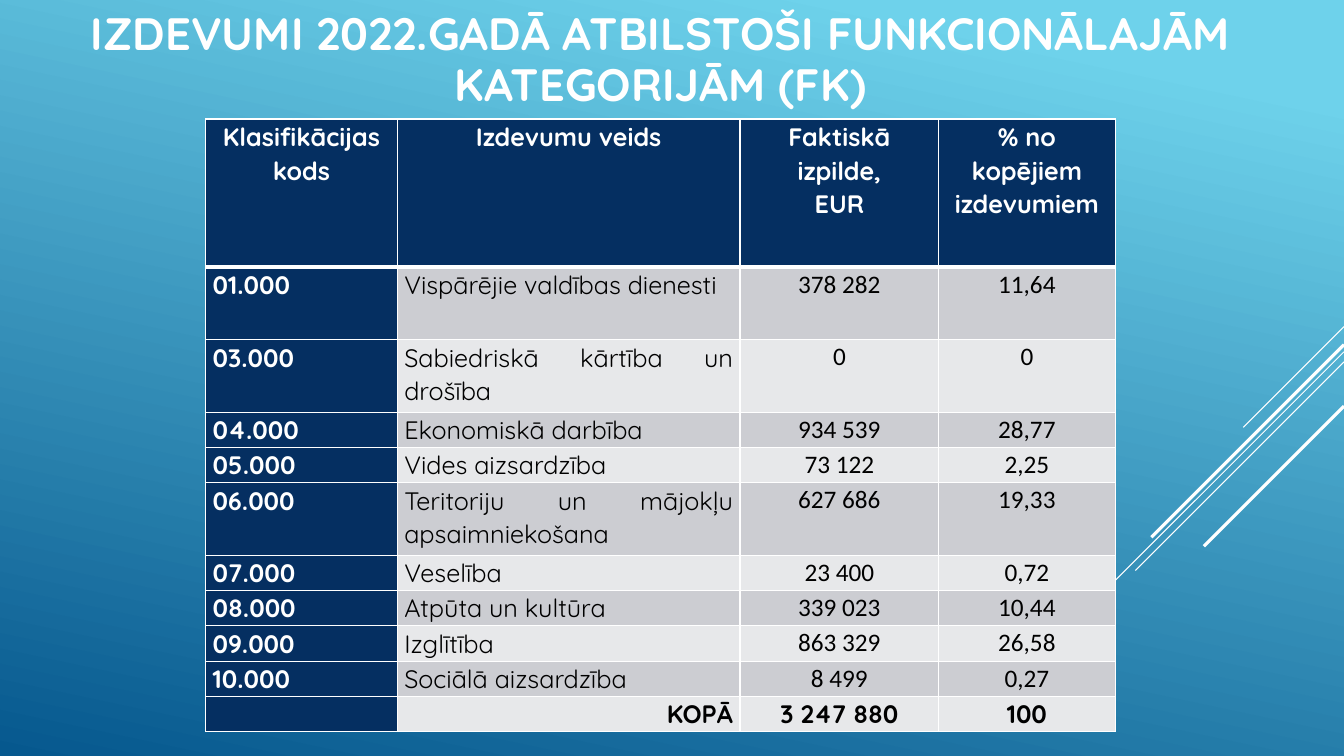
"""Build the slide on 2022 expenditure by functional category."""
from lxml.etree import SubElement
from pptx import Presentation
from pptx.dml.color import RGBColor
from pptx.enum.shapes import MSO_CONNECTOR
from pptx.enum.text import MSO_ANCHOR, PP_ALIGN
from pptx.oxml.ns import qn
from pptx.util import Inches, Pt

TITLE = "IZDEVUMI 2022.GADĀ ATBILSTOŠI FUNKCIONĀLAJĀM KATEGORIJĀM (FK)"
HEADER = ("Klasifikācijas kods", "Izdevumu veids", "Faktiskā izpilde,\nEUR", "% no kopējiem izdevumiem")
EXPENSES = [
    ("01.000", "Vispārējie valdības dienesti", "378 282", "11,64"),
    ("03.000", "Sabiedriskā kārtība un drošība", "0", "0"),
    ("04.000", "Ekonomiskā darbība", "934 539", "28,77"),
    ("05.000", "Vides aizsardzība", "73 122", "2,25"),
    ("06.000", "Teritoriju un mājokļu apsaimniekošana", "627 686", "19,33"),
    ("07.000", "Veselība", "23 400", "0,72"),
    ("08.000", "Atpūta un kultūra", "339 023", "10,44"),
    ("09.000", "Izglītība", "863 329", "26,58"),
    ("10.000", "Sociālā aizsardzība", "8 499", "0,27"),
]
TOTAL = ("", "KOPĀ", "3 247 880", "100")
ROWS = [HEADER, *EXPENSES, TOTAL]
COLUMN_WIDTHS = (1.9, 3.4, 1.97, 1.75)
HEADER_HEIGHT, TALL_HEIGHT, ROW_HEIGHT = 1.47, 0.72, 0.35
TALL_ROWS = (1, 2, 5)
SLIDE_WIDTH = 13.33
DIAGONALS = [(3.24, 1, 0.75), (3.49, 3.26, 0.75), (3.59, 2.07, 0.75), (3.42, 1.91, 2.25), (4.03, 1.39, 2.25)]

WHITE = RGBColor(0xFF, 0xFF, 0xFF)
BLACK = RGBColor(0, 0, 0)
NAVY = RGBColor(0x05, 0x2F, 0x61)
BAND_DARK = RGBColor(0xCC, 0xCD, 0xD2)
BAND_LIGHT = RGBColor(0xE7, 0xE8, 0xEA)
SKY = RGBColor(0x6E, 0xD2, 0xEB)
OCEAN = RGBColor(0x06, 0x58, 0x8E)


def add_run(paragraph, text, size, font_name, color, bold):
    run = paragraph.add_run()
    run.text = text
    run.font.size = Pt(size)
    run.font.name = font_name
    run.font.color.rgb = color
    run.font.bold = bold


def paint_background(slide):
    fill = slide.background.fill
    fill.gradient()
    fill.gradient_angle = 258
    for stop, position, color in zip(fill.gradient_stops, (0.1, 1), (SKY, OCEAN)):
        stop.position = position
        stop.color.rgb = color


def add_diagonals(slide):
    for top, reach, width in DIAGONALS:
        line = slide.shapes.add_connector(
            MSO_CONNECTOR.STRAIGHT, Inches(SLIDE_WIDTH), Inches(top),
            Inches(SLIDE_WIDTH - reach), Inches(top + reach))
        line.line.color.rgb = WHITE
        line.line.width = Pt(width)
        SubElement(line._element.spPr, qn("a:effectLst"))


def add_title(slide):
    frame = slide.shapes.add_textbox(Inches(0.58), 0, Inches(11.94), Inches(1.72)).text_frame
    frame.word_wrap = True
    frame.vertical_anchor = MSO_ANCHOR.MIDDLE
    frame.margin_bottom = Inches(0.57)
    paragraph = frame.paragraphs[0]
    paragraph.alignment = PP_ALIGN.CENTER
    paragraph.line_spacing = 0.95
    add_run(paragraph, TITLE, 32.4, "Quicksand", WHITE, True)


def add_borders(cell, top_width, bottom_width):
    properties = cell._tc.get_or_add_tcPr()
    for side, width in (("L", 1), ("R", 1), ("T", top_width), ("B", bottom_width)):
        border = SubElement(properties, qn(f"a:ln{side}"), w=str(Pt(width)))
        solid = SubElement(border, qn("a:solidFill"))
        SubElement(solid, qn("a:srgbClr"), val=str(WHITE))


def fill_cell(cell, text, row, column):
    is_header, is_total = row == 0, row == len(ROWS) - 1
    is_navy = is_header or column == 0
    add_borders(cell, 3 if row == 1 else 1, 3 if is_header else 1)
    cell.fill.solid()
    cell.fill.fore_color.rgb = NAVY if is_navy else BAND_DARK if row % 2 else BAND_LIGHT
    cell.margin_left = cell.margin_right = Inches(0.07)
    cell.margin_top = cell.margin_bottom = 0
    if is_header or column > 1:
        alignment = PP_ALIGN.CENTER
    else:
        alignment = PP_ALIGN.RIGHT if is_total else PP_ALIGN.JUSTIFY
    bold = is_navy or is_total
    font_name = "Quicksand" if bold or column == 1 else "Calibri"
    frame = cell.text_frame
    for index, line in enumerate(text.split("\n") if text else []):
        paragraph = frame.add_paragraph() if index else frame.paragraphs[0]
        paragraph.alignment = alignment
        paragraph.line_spacing = 1.07
        add_run(paragraph, line, 18, font_name, WHITE if is_navy else BLACK, bold)


def add_expense_table(slide):
    heights = [HEADER_HEIGHT] + [
        TALL_HEIGHT if row in TALL_ROWS else ROW_HEIGHT for row in range(1, len(ROWS))]
    table = slide.shapes.add_table(
        len(ROWS), len(COLUMN_WIDTHS), Inches(2.04), Inches(1.18),
        Inches(sum(COLUMN_WIDTHS)), Inches(sum(heights))).table
    for column, width in zip(table.columns, COLUMN_WIDTHS):
        column.width = Inches(width)
    for row, (values, height) in enumerate(zip(ROWS, heights)):
        table.rows[row].height = Inches(height)
        for column, text in enumerate(values):
            fill_cell(table.cell(row, column), text, row, column)


def main():
    presentation = Presentation()
    presentation.slide_width = Inches(SLIDE_WIDTH)
    presentation.slide_height = Inches(7.5)
    slide = presentation.slides.add_slide(presentation.slide_layouts[6])
    paint_background(slide)
    add_diagonals(slide)
    add_title(slide)
    add_expense_table(slide)
    presentation.save("out.pptx")


if __name__ == "__main__":
    main()
